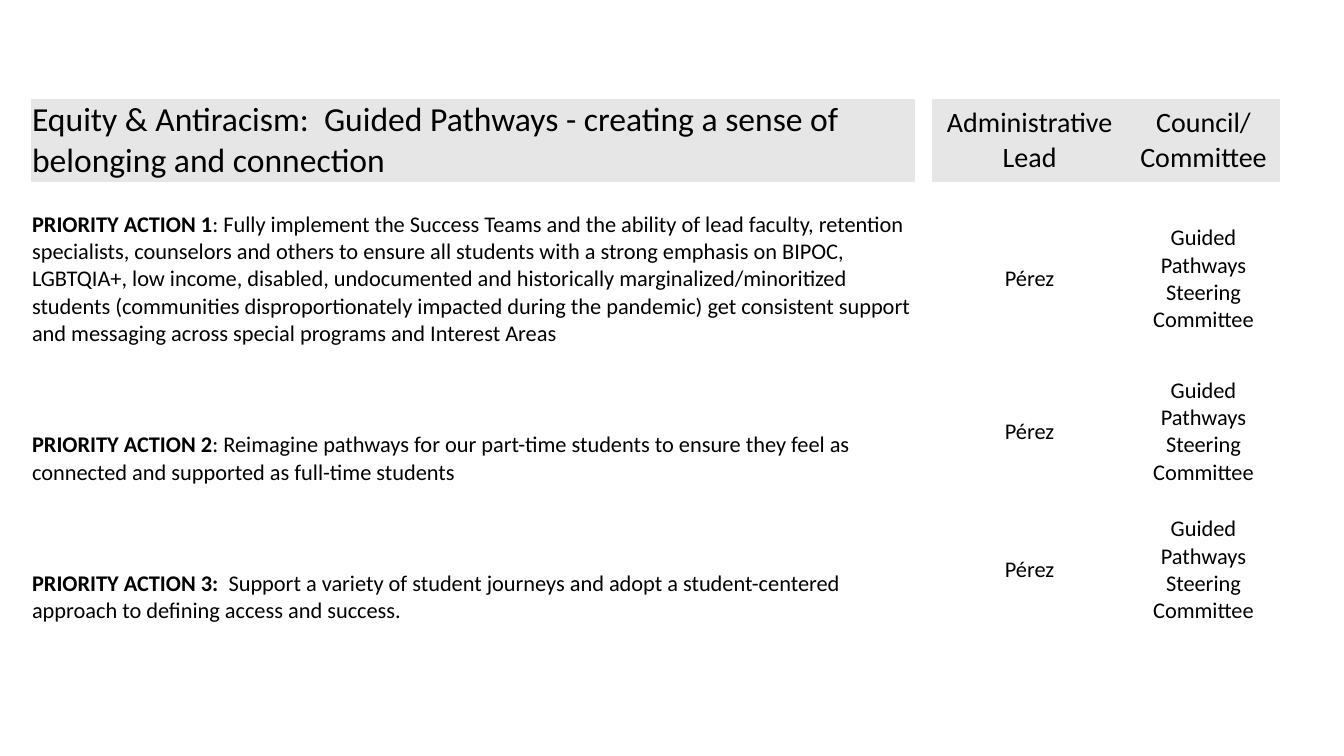
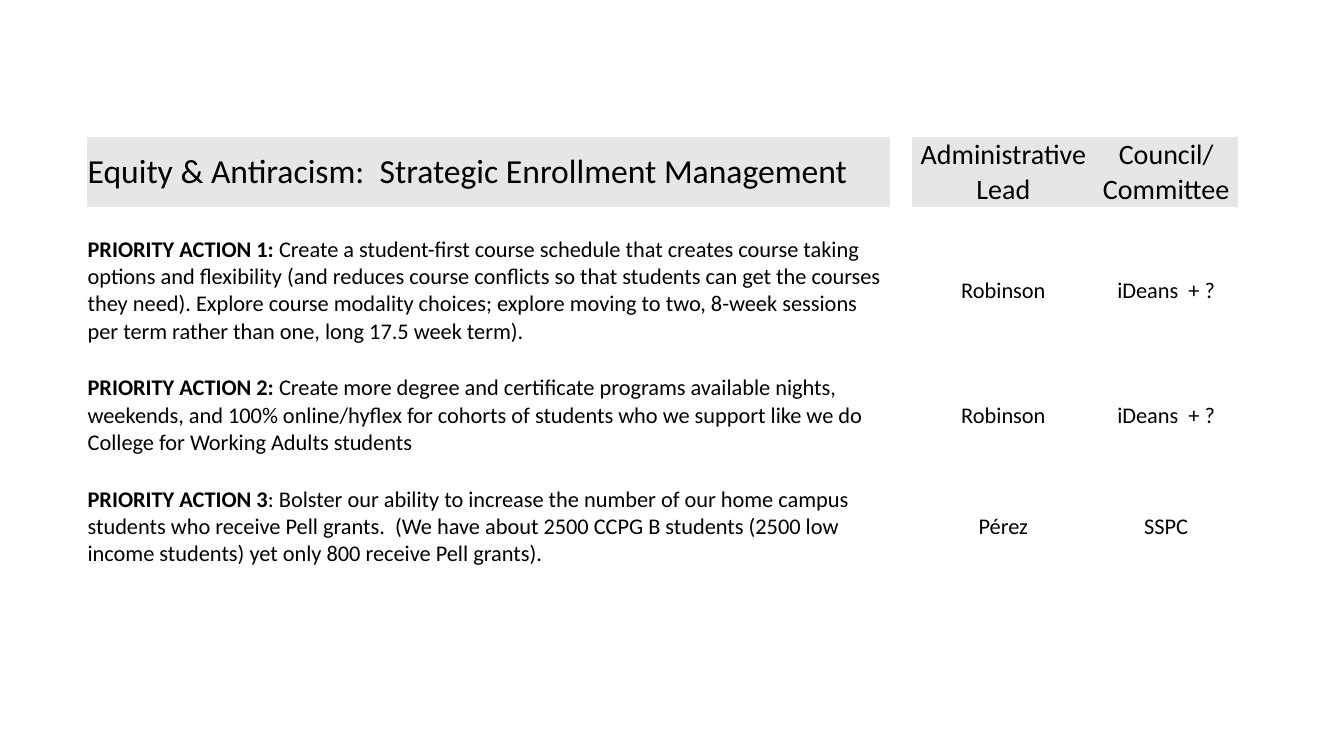
from lxml.etree import SubElement
from pptx import Presentation
from pptx.dml.color import RGBColor
from pptx.enum.text import MSO_ANCHOR, PP_ALIGN
from pptx.oxml.ns import qn
from pptx.util import Pt

BLACK = RGBColor(0x00, 0x00, 0x00)
HEADER_GRAY = RGBColor(0xE7, 0xE6, 0xE6)
FONT = "Calibri"
TITLE_SIZE, HEADING_SIZE, BODY_SIZE = 24, 20, 16
CELL_INSET = 0.6
SPACER_HEIGHT = 20.2
PLAIN_STYLE = "{2D5ABB26-0587-4C30-8999-92F81FD0307C}"
HEADINGS = ("Administrative Lead", "Council/ Committee")
STEERING = "Guided Pathways Steering Committee"

PLANS = [
    {
        "title": "Equity & Antiracism:  Guided Pathways - creating a sense of belonging and connection",
        "origin": (22.3, 70.5),
        "widths": (631.4, 12.3, 139, 109.4),
        "heights": (59.2, 98.4, 78.8, 78.8),
        "actions": [
            ("PRIORITY ACTION 1",
             ": Fully implement the Success Teams and the ability of lead faculty, retention "
             "specialists, counselors and others to ensure all students with a strong emphasis on "
             "BIPOC, LGBTQIA+, low income, disabled, undocumented and historically "
             "marginalized/minoritized students (communities disproportionately impacted during "
             "the pandemic) get consistent support and messaging across special programs and "
             "Interest Areas", "Pérez", STEERING),
            ("PRIORITY ACTION 2",
             ": Reimagine pathways for our part-time students to ensure they feel as connected "
             "and supported as full-time students", "Pérez", STEERING),
            ("PRIORITY ACTION 3:",
             "  Support a variety of student journeys and adopt a student-centered approach to "
             "defining access and success.", "Pérez", STEERING),
        ],
    },
    {
        "title": "Equity & Antiracism:  Strategic Enrollment Management",
        "origin": (62, 98),
        "widths": (573.8, 15.8, 130.3, 102.3),
        "heights": (49.4, 78.8, 59.2, 59.2),
        "actions": [
            ("PRIORITY ACTION 1: ",
             "Create a student-first course schedule that creates course taking options and "
             "flexibility (and reduces course conflicts so that students can get the courses they "
             "need). Explore course modality choices; explore moving to two, 8-week sessions per "
             "term rather than one, long 17.5 week term).", "Robinson", "iDeans  + ?"),
            ("PRIORITY ACTION 2: ",
             "Create more degree and certificate programs available nights, weekends, and 100% "
             "online/hyflex for cohorts of students who we support like we do College for Working "
             "Adults students", "Robinson", "iDeans  + ?"),
            ("PRIORITY ACTION 3",
             ": Bolster our ability to increase the number of our home campus students who "
             "receive Pell grants.  (We have about 2500 CCPG B students (2500 low income "
             "students) yet only 800 receive Pell grants).", "Pérez", "SSPC"),
        ],
    },
]


def clear_cell(cell):
    """Strip the fill and padding of a cell and size its empty line."""
    cell.fill.background()
    cell.margin_left = cell.margin_right = cell.margin_top = Pt(CELL_INSET)
    cell.margin_bottom = 0
    p = cell.text_frame.paragraphs[0]
    SubElement(p._p, qn("a:endParaRPr"), sz=str(BODY_SIZE * 100))


def write_cell(cell, runs, size, align=PP_ALIGN.CENTER, anchor=MSO_ANCHOR.MIDDLE, fill=None):
    """Write (text, bold) runs into a cell."""
    cell.vertical_anchor = anchor
    if fill is not None:
        cell.fill.solid()
        cell.fill.fore_color.rgb = fill
    p = cell.text_frame.paragraphs[0]
    p.alignment = align
    p.font.name = FONT
    p.font.size = Pt(size)
    p.font.color.rgb = BLACK
    for text, bold in runs:
        r = p.add_run()
        r.text = text
        r.font.bold = bold


def add_plain_table(s, origin, widths, heights):
    """Add an unstyled table with the given column widths and row heights."""
    box = [Pt(v) for v in (*origin, sum(widths), sum(heights))]
    table = s.shapes.add_table(len(heights), len(widths), *box).table
    table.first_row = table.horz_banding = False
    table._tbl.tblPr.find(qn("a:tableStyleId")).text = PLAIN_STYLE
    for column, width in zip(table.columns, widths):
        column.width = Pt(width)
    for row, height in zip(table.rows, heights):
        row.height = Pt(height)
    for cell in table.iter_cells():
        clear_cell(cell)
    return table


def add_plan_slide(prs, plan):
    """Add one slide with a header row and its priority actions."""
    s = prs.slides.add_slide(prs.slide_layouts[6])
    heights = [plan["heights"][0]]
    for height in plan["heights"][1:]:
        heights += [SPACER_HEIGHT, height]
    table = add_plain_table(s, plan["origin"], plan["widths"], heights)
    write_cell(table.cell(0, 0), [(plan["title"], False)], TITLE_SIZE,
               PP_ALIGN.LEFT, fill=HEADER_GRAY)
    for col, heading in enumerate(HEADINGS, 2):
        write_cell(table.cell(0, col), [(heading, False)], HEADING_SIZE, fill=HEADER_GRAY)
    for i, (label, detail, lead, council) in enumerate(plan["actions"], 1):
        write_cell(table.cell(2 * i, 0), [(label, True), (detail, False)], BODY_SIZE,
                   PP_ALIGN.LEFT, MSO_ANCHOR.BOTTOM)
        for col, text in enumerate((lead, council), 2):
            write_cell(table.cell(2 * i, col), [(text, False)], BODY_SIZE)


def main():
    """Build and save the presentation."""
    prs = Presentation()
    prs.slide_width, prs.slide_height = Pt(960), Pt(540)
    for plan in PLANS:
        add_plan_slide(prs, plan)
    prs.save("out.pptx")


if __name__ == "__main__":
    main()
